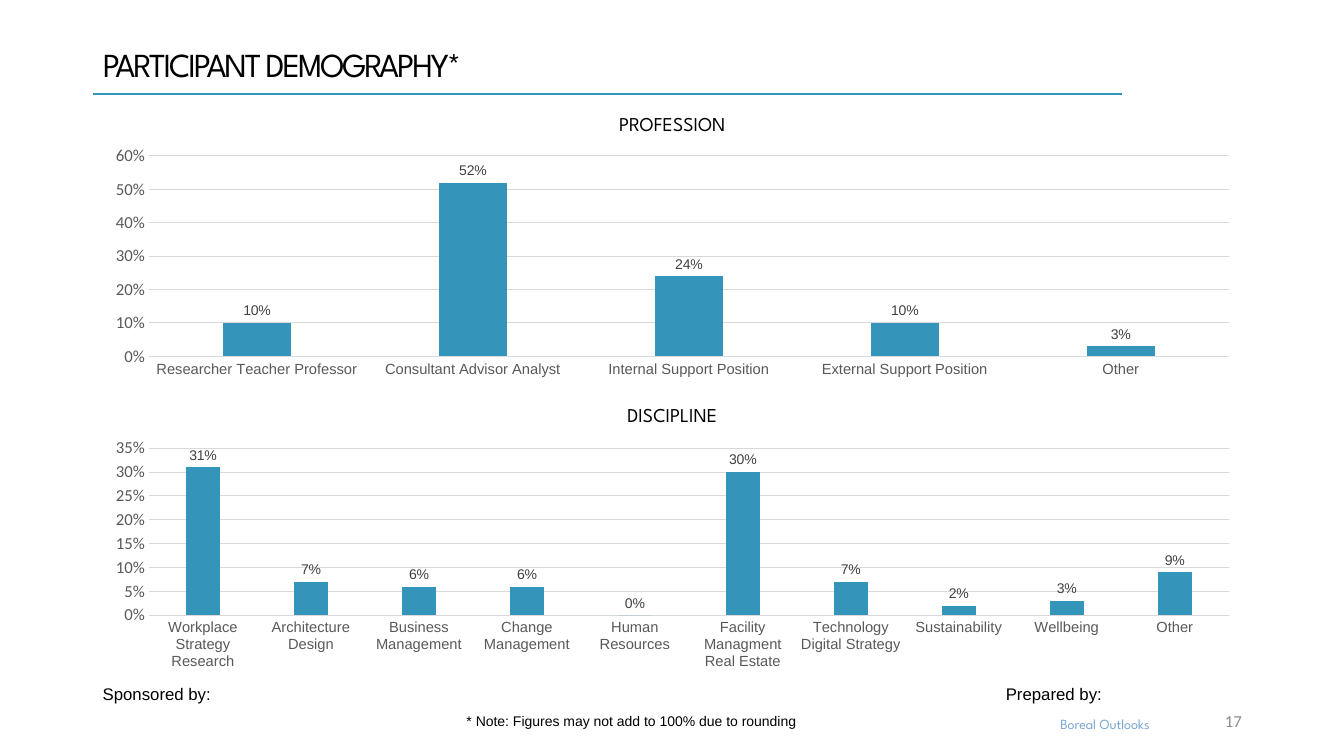
from lxml import etree
from pptx import Presentation
from pptx.chart.data import CategoryChartData
from pptx.dml.color import RGBColor
from pptx.enum.chart import XL_CHART_TYPE, XL_LABEL_POSITION, XL_TICK_MARK
from pptx.enum.shapes import MSO_CONNECTOR
from pptx.enum.text import MSO_ANCHOR, PP_ALIGN
from pptx.oxml.ns import qn
from pptx.util import Pt

COLUMNS = XL_CHART_TYPE.COLUMN_CLUSTERED
OUTSIDE_END = XL_LABEL_POSITION.OUTSIDE_END
NO_TICK = XL_TICK_MARK.NONE
STRAIGHT = MSO_CONNECTOR.STRAIGHT
TOP, MIDDLE = MSO_ANCHOR.TOP, MSO_ANCHOR.MIDDLE
LEFT, CENTER, RIGHT = PP_ALIGN.LEFT, PP_ALIGN.CENTER, PP_ALIGN.RIGHT

BLACK = RGBColor(0x00, 0x00, 0x00)
ACCENT = RGBColor(0x34, 0x94, 0xBA)
PALE_BLUE = RGBColor(0x7A, 0xA5, 0xD2)
PAGE_GRAY = RGBColor(0x8C, 0x8C, 0x8C)
AXIS_GRAY = RGBColor(0x59, 0x59, 0x59)
LABEL_GRAY = RGBColor(0x40, 0x40, 0x40)
GRID_GRAY = RGBColor(0xD9, 0xD9, 0xD9)

HEADING_FONT, TEXT_FONT, NUMBER_FONT = "League Spartan", "Arial", "Calibri"
MARGIN = 66.24
CHART_WIDTH, CHART_HEIGHT = 828, 172.08

PROFESSIONS = {
    "Researcher Teacher Professor": 0.10,
    "Consultant Advisor Analyst": 0.52,
    "Internal Support Position": 0.24,
    "External Support Position": 0.10,
    "Other": 0.03,
}
DISCIPLINES = {
    "Workplace Strategy Research": 0.31,
    "Architecture Design": 0.07,
    "Business Management": 0.06,
    "Change Management": 0.06,
    "Human Resources": 0,
    "Facility Managment Real Estate": 0.30,
    "Technology Digital Strategy": 0.07,
    "Sustainability": 0.02,
    "Wellbeing": 0.03,
    "Other": 0.09,
}


def set_font(font, name, size, color):
    """Apply typeface, size and colour to a font."""
    font.name = name
    font.size = Pt(size)
    font.color.rgb = color


def write_text(frame, text, font=TEXT_FONT, size=12, color=BLACK,
               align=LEFT, anchor=TOP, line_spacing=None, tracking=None):
    """Write one formatted paragraph into a text frame."""
    frame.word_wrap = True
    frame.vertical_anchor = anchor
    paragraph = frame.paragraphs[0]
    paragraph.alignment = align
    if line_spacing:
        paragraph.line_spacing = line_spacing
    run = paragraph.add_run()
    run.text = text
    set_font(run.font, font, size, color)
    if tracking:
        run._r.get_or_add_rPr().set("spc", str(int(tracking * 100)))


def add_label(slide, text, left, top, width, height, **text_format):
    """Add a text box holding one formatted line."""
    label = slide.shapes.add_textbox(Pt(left), Pt(top), Pt(width), Pt(height))
    write_text(label.text_frame, text, **text_format)


def place_title(slide, text):
    """Move the title placeholder into place and fill it."""
    title = slide.shapes.title
    title.left, title.top = Pt(MARGIN), Pt(28.8)
    title.width, title.height = Pt(735.84), Pt(38.16)
    write_text(title.text_frame, text, font=HEADING_FONT, size=24,
               anchor=MIDDLE, line_spacing=0.9, tracking=-1.5)


def add_rule(slide, left, right, y):
    """Draw the horizontal line below the title."""
    rule = slide.shapes.add_connector(STRAIGHT, Pt(left), Pt(y), Pt(right), Pt(y))
    rule.line.color.rgb = ACCENT
    rule.line.width = Pt(1.5)
    etree.SubElement(rule._element.spPr, qn("a:effectLst"))


def style_line(line):
    """Give an axis or grid line its thin gray stroke."""
    line.color.rgb = GRID_GRAY
    line.width = Pt(0.75)


def style_axes(chart, maximum, step):
    """Format the category axis, the value axis and the grid."""
    categories, values = chart.category_axis, chart.value_axis
    for axis in (categories, values):
        axis.major_tick_mark = axis.minor_tick_mark = NO_TICK
    set_font(categories.tick_labels.font, TEXT_FONT, 10.5, AXIS_GRAY)
    style_line(categories.format.line)
    set_font(values.tick_labels.font, NUMBER_FONT, 12, AXIS_GRAY)
    values.tick_labels.number_format = "0%"
    values.tick_labels.number_format_is_linked = False
    values.minimum_scale, values.maximum_scale = 0, maximum
    values.major_unit = step
    values.format.line.fill.background()
    style_line(values.major_gridlines.format.line)


def add_share_chart(slide, shares, top, maximum, step):
    """Add a column chart of percentages by category."""
    share_data = CategoryChartData(number_format="0%")
    share_data.categories = list(shares)
    share_data.add_series("Series 1", list(shares.values()))
    chart = slide.shapes.add_chart(
        COLUMNS, Pt(MARGIN), Pt(top), Pt(CHART_WIDTH), Pt(CHART_HEIGHT), share_data
    ).chart
    chart.has_title = chart.has_legend = False
    set_font(chart.font, NUMBER_FONT, 10, BLACK)
    style_axes(chart, maximum, step)

    columns = chart.plots[0]
    columns.vary_by_categories = False
    columns.gap_width, columns.overlap = 219, -27
    series = columns.series[0]
    series.invert_if_negative = False
    series.format.fill.solid()
    series.format.fill.fore_color.rgb = ACCENT
    labels = series.data_labels
    labels.show_value = True
    labels.position = OUTSIDE_END
    labels.number_format = "0%"
    labels.number_format_is_linked = False
    set_font(labels.font, TEXT_FONT, 10, LABEL_GRAY)


def add_chart_section(slide, heading, heading_top, shares, chart_top, maximum, step):
    """Add a centred heading and the chart below it."""
    add_label(slide, heading, 330.48, heading_top, 299.52, 24.48,
              font=HEADING_FONT, size=14, align=CENTER)
    add_share_chart(slide, shares, chart_top, maximum, step)


def main():
    """Build and save the demography slide."""
    deck = Presentation()
    deck.slide_width, deck.slide_height = Pt(960), Pt(540)
    slide = deck.slides.add_slide(deck.slide_layouts[5])

    place_title(slide, "PARTICIPANT DEMOGRAPHY*")
    add_rule(slide, MARGIN, 801.36, 66.96)
    add_chart_section(slide, "PROFESSION", 76.32, PROFESSIONS, 100.8, 0.6, 0.1)
    add_chart_section(slide, "DISCIPLINE", 284.4, DISCIPLINES, 309.6, 0.35, 0.05)

    add_label(slide, "Sponsored by:", MARGIN, 484.56, 99.36, 21.6)
    add_label(slide, "Prepared by:", 711.36, 484.56, 99.36, 21.6)
    add_label(slide, "* Note: Figures may not add to 100% due to rounding",
              326.16, 505.44, 307.44, 19.44, size=10)
    add_label(slide, "Boreal Outlooks", 750.24, 507.6, 99.36, 19.44,
              font=HEADING_FONT, size=10, color=PALE_BLUE)
    add_label(slide, "17", 678.24, 500.4, 216, 28.8, font=NUMBER_FONT,
              color=PAGE_GRAY, align=RIGHT, anchor=MIDDLE)
    deck.save("out.pptx")


if __name__ == "__main__":
    main()
